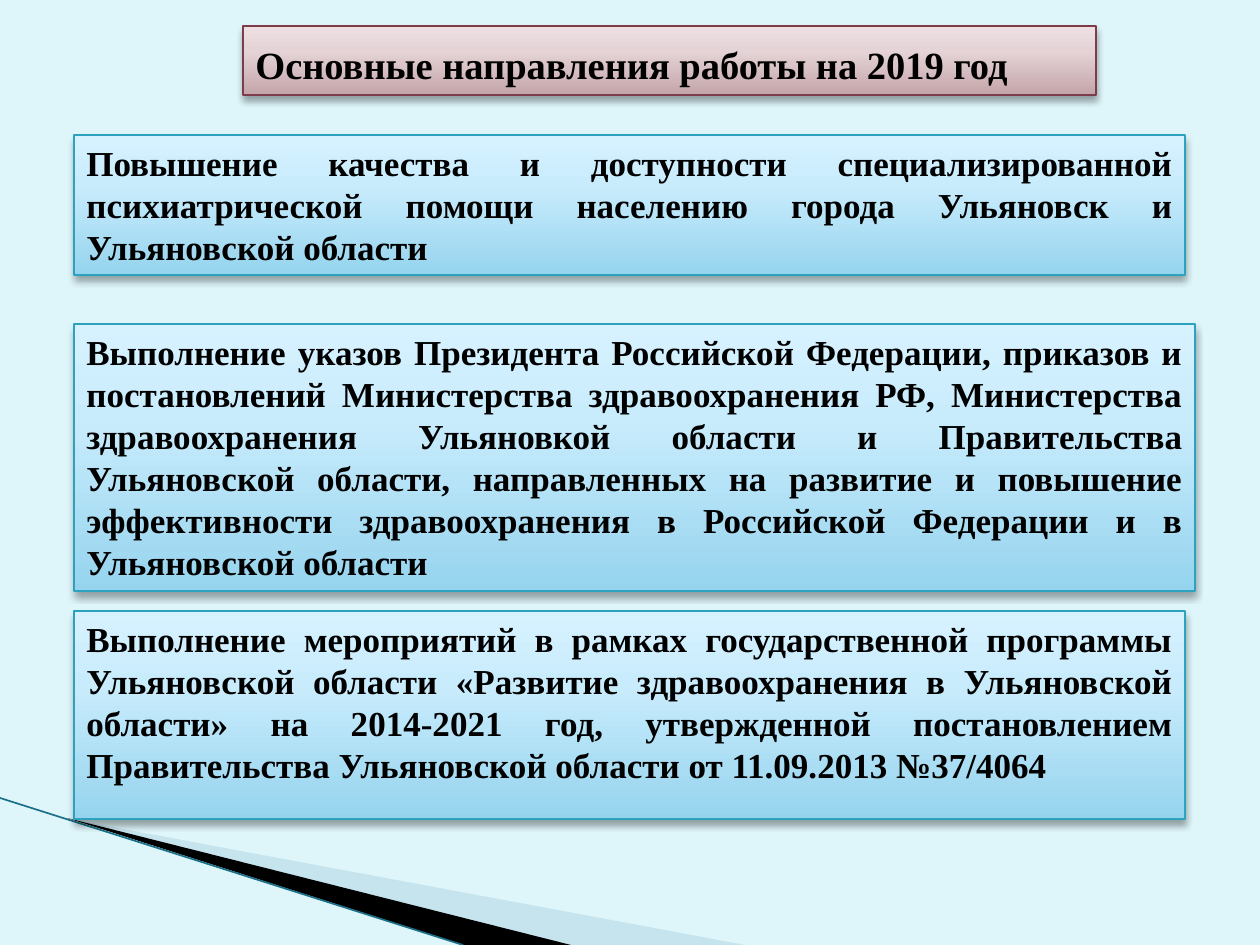
from copy import deepcopy

from lxml import etree
from pptx import Presentation
from pptx import util as u
from pptx.dml.color import RGBColor
from pptx.enum import shapes, text
from pptx.oxml.ns import qn

COLORS = {
    "background": "DEF5FA",
    "ink": "000000",
    "pale_wedge": "A0CBDC",
    "edge": "1B7088",
    "blue_line": "2DA2BF",
    "rose_line": "7D3C4A",
}
GRADIENTS = {
    "blue": ("96D4EE", "C9ECFC", "D7F2FF"),
    "rose": ("C4A5A9", "E5D4D7", "EEE0E2"),
}
STOPS = (0, 0.65, 1)
EMU_PER_PX = 914400 / 126
WIDTH, HEIGHT = 1260, 945

TITLE = "Основные направления работы на 2019 год"
QUALITY = (
    "Повышение качества и доступности специализированной психиатрической "
    "помощи населению города Ульяновск и Ульяновской области"
)
DECREES = (
    "Выполнение указов Президента Российской Федерации, приказов и "
    "постановлений Министерства здравоохранения РФ, Министерства "
    "здравоохранения Ульяновкой области и Правительства Ульяновской области, "
    "направленных на развитие и повышение эффективности здравоохранения "
    "в Российской Федерации и в Ульяновской области"
)
PROGRAM = (
    "Выполнение мероприятий в рамках государственной программы Ульяновской "
    "области «Развитие здравоохранения в Ульяновской области» на 2014-2021 "
    "год, утвержденной постановлением Правительства Ульяновской области "
    "от 11.09.2013 №37/4064"
)


def px(value):
    return u.Emu(round(value * EMU_PER_PX))


def rgb(name):
    return RGBColor.from_string(COLORS.get(name, name))


class Deck:
    font = "Times New Roman"

    def __init__(self):
        self.presentation = Presentation()
        self.presentation.slide_width = px(WIDTH)
        self.presentation.slide_height = px(HEIGHT)
        self.slide = self.presentation.slides.add_slide(
            self.presentation.slide_layouts[6]
        )
        background = self.slide.background.fill
        background.solid()
        background.fore_color.rgb = rgb("background")

    def wedge(self, points, color, opacity=100):
        builder = self.slide.shapes.build_freeform(*points[0], scale=EMU_PER_PX)
        builder.add_line_segments(points[1:], close=True)
        wedge = builder.convert_to_shape()
        wedge.shadow.inherit = False
        wedge.fill.solid()
        wedge.fill.fore_color.rgb = rgb(color)
        wedge.line.fill.background()
        if opacity < 100:
            tint = wedge._element.spPr.find(".//" + qn("a:srgbClr"))
            etree.SubElement(tint, qn("a:alpha"), val=str(opacity * 1000))

    def line(self, start, end, color, width):
        edge = self.slide.shapes.add_connector(
            shapes.MSO_CONNECTOR.STRAIGHT, *map(px, start + end)
        )
        edge.line.color.rgb = rgb(color)
        edge.line.width = u.Pt(width)
        etree.SubElement(edge._element.spPr, qn("a:effectLst"))

    def gradient(self, panel, colors):
        panel.fill.gradient()
        panel.fill.gradient_angle = 90
        stop_list = panel._element.spPr.find(".//" + qn("a:gsLst"))
        stop_list.append(deepcopy(stop_list[0]))
        for stop, position, color in zip(panel.fill.gradient_stops, STOPS, colors):
            stop.position = position
            stop.color.rgb = rgb(color)

    def soft_shadow(self, panel):
        panel.shadow.inherit = False
        effects = panel._element.spPr.find(qn("a:effectLst"))
        shadow = etree.SubElement(
            effects, qn("a:outerShdw"), blurRad=str(u.Pt(4)),
            dist=str(u.Pt(3)), dir="5400000", rotWithShape="0",
        )
        tint = etree.SubElement(shadow, qn("a:srgbClr"), val=COLORS["ink"])
        etree.SubElement(tint, qn("a:alpha"), val="35000")

    def panel(self, box, wording, theme="blue", size=20,
              align=text.PP_ALIGN.JUSTIFY, spacing=None):
        panel = self.slide.shapes.add_shape(
            shapes.MSO_SHAPE.RECTANGLE, *map(px, box)
        )
        self.gradient(panel, GRADIENTS[theme])
        panel.line.color.rgb = rgb(f"{theme}_line")
        panel.line.width = u.Pt(0.75)
        self.soft_shadow(panel)
        frame = panel.text_frame
        frame.text = wording
        frame.word_wrap = True
        frame.vertical_anchor = text.MSO_ANCHOR.TOP
        paragraph = frame.paragraphs[0]
        paragraph.alignment = align
        paragraph.line_spacing = spacing
        for run in paragraph.runs:
            run.font.name = self.font
            run.font.size = u.Pt(size)
            run.font.bold = True
            run.font.color.rgb = rgb("ink")


def main():
    deck = Deck()
    deck.wedge([(69, 819), (745, HEIGHT), (571, HEIGHT)], "pale_wedge", opacity=40)
    deck.wedge([(67, 818), (571, HEIGHT), (464, HEIGHT)], "ink")
    deck.line((0, 798), (463, HEIGHT), "edge", 0.95)
    deck.panel((74, 611, 1111, 208), PROGRAM)
    deck.panel((74, 135, 1111, 140), QUALITY)
    deck.panel((74, 324, 1121, 267), DECREES)
    deck.panel((243, 26, 853, 69), TITLE, theme="rose", size=22,
               align=text.PP_ALIGN.LEFT, spacing=1.2)
    deck.presentation.save("out.pptx")


if __name__ == "__main__":
    main()
